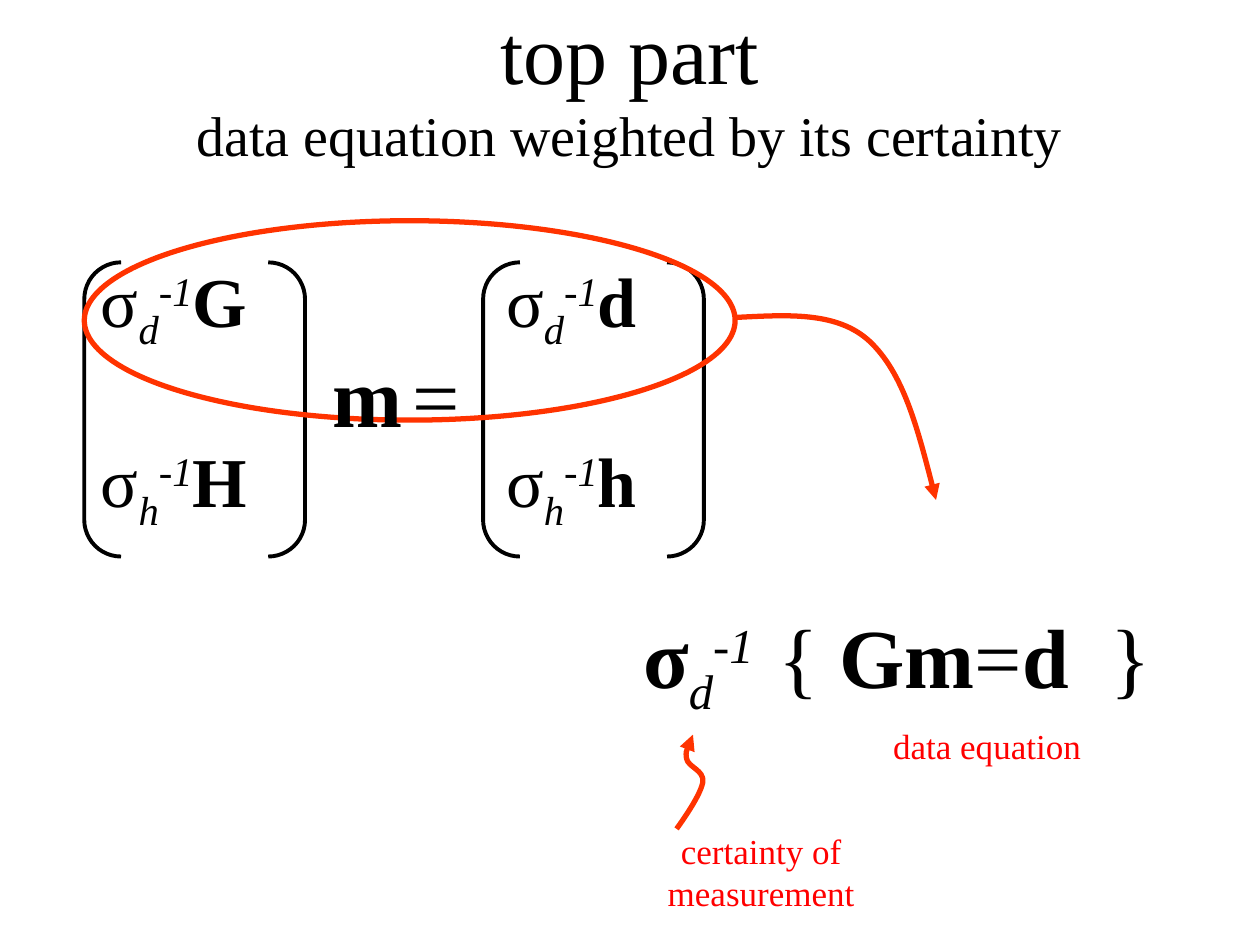
from lxml.etree import SubElement
from pptx import Presentation
from pptx.dml.color import RGBColor
from pptx.enum.shapes import MSO_SHAPE
from pptx.enum.text import MSO_ANCHOR, MSO_AUTO_SIZE, PP_ALIGN
from pptx.oxml.ns import qn
from pptx.util import Cm, Pt

COLORS = {"ink": "000000", "note": "FF0000", "mark": "FF3300", "paper": "FFFFFF"}
STYLES = {
    "plain": {"bold": False, "italic": False},
    "bold": {"bold": True, "italic": False},
    "sub": {"bold": False, "italic": True},
    "sup": {"bold": False, "italic": True},
}
BASELINES = {"sub": "-25000", "sup": "30000"}


def write_runs(paragraph, runs, size, color="ink"):
    for text, style in runs:
        run = paragraph.add_run()
        run.text = text
        run.font.color.rgb = RGBColor.from_string(COLORS[color])
        values = {"name": "Times New Roman", "size": Pt(size), **STYLES[style]}
        for attribute, value in values.items():
            setattr(run.font, attribute, value)
        if style in BASELINES:
            run.font._element.set("baseline", BASELINES[style])


def outline(shape, color, width):
    shape.shadow.inherit = False
    shape.fill.background()
    shape.line.color.rgb = RGBColor.from_string(COLORS[color])
    shape.line.width = Pt(width)


prs = Presentation()
prs.slide_width, prs.slide_height = Cm(25.4), Cm(19.05)
slide = prs.slides.add_slide(prs.slide_layouts[5])
shapes = slide.shapes

title = shapes.title
title_place = {"left": 0, "top": 0, "width": Cm(25.4), "height": Cm(3.39)}
for attribute, value in title_place.items():
    setattr(title, attribute, value)
title.text_frame.auto_size = MSO_AUTO_SIZE.NONE
title.text_frame.vertical_anchor = MSO_ANCHOR.MIDDLE
heading = title.text_frame.paragraphs[0]
heading.alignment = PP_ALIGN.CENTER
write_runs(heading, [("top part", "plain")], 48)
heading.add_line_break()
write_runs(heading, [("data equation weighted by its certainty", "plain")], 32)

vectors = [(1.78, 1.7, ["G", "H"]), (9.95, 9.74, ["d", "h"])]
for column_left, bracket_left, symbols in vectors:
    column = shapes.add_table(2, 1, Cm(column_left), Cm(5.21), Cm(4.66), Cm(7.28)).table
    column.first_row = column.horz_banding = False
    for row, (index, symbol) in enumerate(zip("dh", symbols)):
        cell = column.cell(row, 0)
        cell.fill.solid()
        cell.fill.fore_color.rgb = RGBColor.from_string(COLORS["paper"])
        entry = [("σ", "plain"), (index, "sub"), ("-1", "sup"), (symbol, "bold")]
        write_runs(cell.text_frame.paragraphs[0], entry, 40)
    bracket = shapes.add_shape(
        MSO_SHAPE.DOUBLE_BRACKET, Cm(bracket_left), Cm(5.29), Cm(4.45), Cm(5.93))
    outline(bracket, "ink", 2.25)

top_ring = shapes.add_shape(MSO_SHAPE.OVAL, Cm(1.7), Cm(4.45), Cm(13.12), Cm(4.02))
outline(top_ring, "mark", 3)

weighted_equation = [
    ("σ", "bold"), ("d", "sub"), ("-1  ", "sup"), ("{ ", "plain"),
    ("Gm", "bold"), ("=", "plain"), ("d  ", "bold"), ("}", "plain"),
]
labels = [
    (12.27, 10.8, 11.63, 5.08, weighted_equation, 48, "ink"),
    (17.15, 14.18, 5.5, 1.7, [("data equation", "plain")], 20, "note"),
    (6.99, 4.66, 3.6, 6.56, [("=", "plain")], 48, "ink"),
    (12.7, 16.72, 5.29, 1.7, [("certainty of measurement", "plain")], 20, "note"),
    (6.35, 7.2, 2.12, 1.48, [("m", "bold")], 48, "ink"),
]
for left, top, width, height, runs, size, color in labels:
    frame = shapes.add_textbox(Cm(left), Cm(top), Cm(width), Cm(height)).text_frame
    frame.word_wrap = True
    frame.vertical_anchor = MSO_ANCHOR.MIDDLE
    frame.paragraphs[0].alignment = PP_ALIGN.CENTER
    write_runs(frame.paragraphs[0], runs, size, color)

curves = [
    [(1364, 1671), (1389, 1636), (1412, 1600), (1417, 1577), (1420, 1552),
     (1387, 1547), (1384, 1529), (1382, 1514), (1389, 1499), (1397, 1481)],
    [(1483, 640), (1585, 635), (1687, 627), (1753, 688),
     (1821, 752), (1854, 879), (1887, 1008)],
]
for start, *controls in curves:
    builder = shapes.build_freeform(*start, scale=Cm(0.01))
    builder.add_line_segments(controls, close=False)
    arrow = builder.convert_to_shape()
    outline(arrow, "mark", 3)
    segments = list(arrow._element.iter(qn("a:lnTo")))
    for first in range(0, len(segments), 3):
        trio = segments[first:first + 3]
        bezier = SubElement(trio[0].getparent(), qn("a:cubicBezTo"))
        for segment in trio:
            bezier.append(segment[0])
            segment.getparent().remove(segment)
    SubElement(arrow._element.spPr.find(qn("a:ln")), qn("a:tailEnd"), type="triangle")

prs.save("out.pptx")
